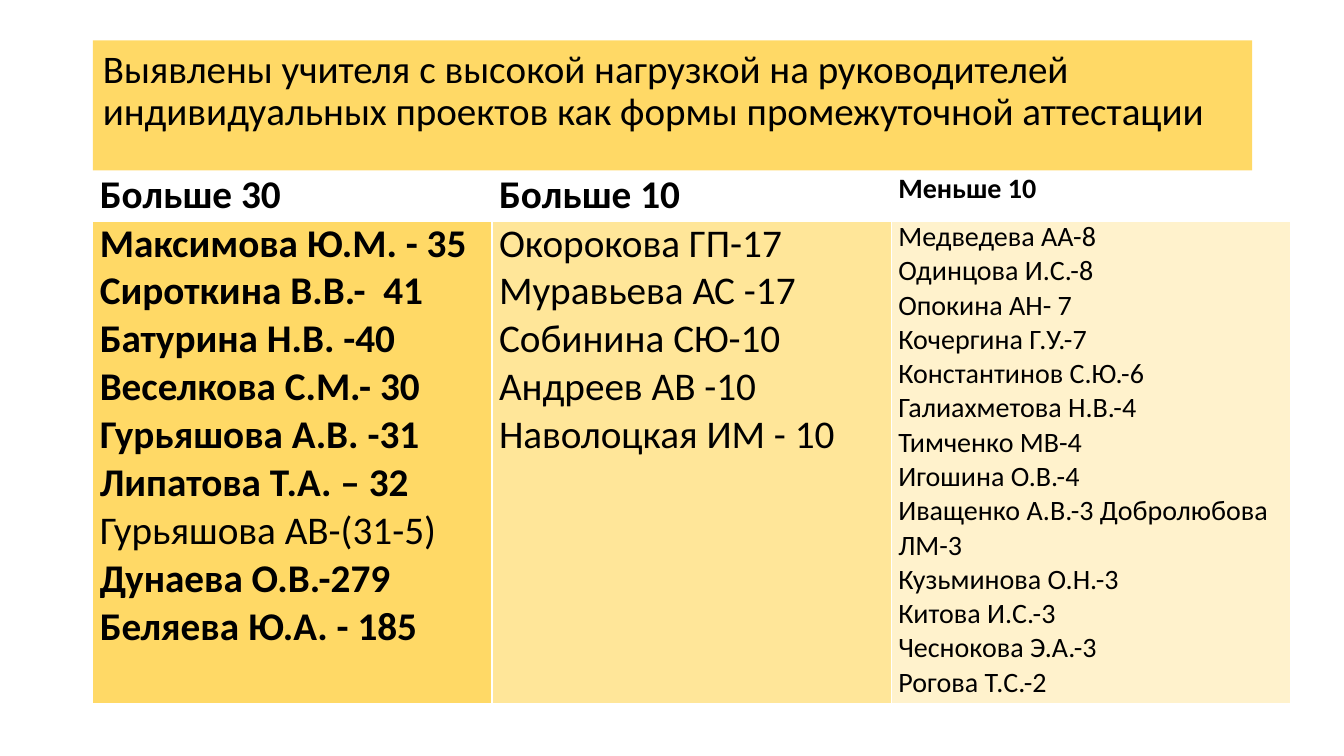
"""Build a slide that groups teachers by their individual project load."""
from dataclasses import dataclass

from lxml import etree
from pptx import Presentation
from pptx.dml.color import RGBColor
from pptx.enum.text import MSO_ANCHOR, MSO_AUTO_SIZE, PP_ALIGN
from pptx.oxml.ns import qn
from pptx.util import Inches, Pt

LEFT = PP_ALIGN.LEFT
TOP = MSO_ANCHOR.TOP
MIDDLE = MSO_ANCHOR.MIDDLE
NO_AUTOFIT = MSO_AUTO_SIZE.NONE

FONT = "Calibri"
BLACK = "000000"
WHITE = "FFFFFF"
GOLD = "FFD966"
TITLE_ONLY = 5
TABLE_LEFT, TABLE_TOP = 0.92, 1.7
COLUMN_WIDTH = 3.96
ROW_HEIGHTS = (0.48, 4.8)
TITLE = ("Выявлены учителя с высокой нагрузкой на руководителей "
         "индивидуальных проектов как формы промежуточной аттестации")


@dataclass(frozen=True)
class LoadGroup:
    """One table column: a load level and its teachers."""

    heading: str
    teachers: tuple[str, ...]
    fill: str
    size: float
    bold: bool = False
    regular: tuple[str, ...] = ()


GROUPS = (
    LoadGroup(
        "Больше 30",
        ("Максимова Ю.М. - 35", "Сироткина В.В.-  41", "Батурина Н.В. -40",
         "Веселкова С.М.- 30", "Гурьяшова А.В. -31", "Липатова Т.А. – 32",
         "Гурьяшова АВ-(31-5)", "Дунаева О.В.-279", "Беляева Ю.А. - 185"),
        GOLD, 28, bold=True, regular=("Гурьяшова АВ-(31-5)",)),
    LoadGroup(
        "Больше 10",
        ("Окорокова ГП-17", "Муравьева АС -17", "Собинина СЮ-10",
         "Андреев АВ -10", "Наволоцкая ИМ - 10"),
        "FFE699", 28),
    LoadGroup(
        "Меньше 10",
        ("Медведева АА-8", "Одинцова И.С.-8", "Опокина АН- 7",
         "Кочергина Г.У.-7", "Константинов С.Ю.-6 Галиахметова Н.В.-4",
         "Тимченко МВ-4", "Игошина О.В.-4",
         "Иващенко А.В.-3 Добролюбова ЛМ-3", "Кузьминова О.Н.-3",
         "Китова И.С.-3", "Чеснокова Э.А.-3", "Рогова Т.С.-2"),
        "FFF2CC", 20),
)


def color(value: str) -> RGBColor:
    """Turn a hex string into a colour."""
    return RGBColor.from_string(value)


def paint(target, value: str) -> None:
    """Fill a shape or a cell with a solid colour."""
    target.fill.solid()
    target.fill.fore_color.rgb = color(value)


def write(para, text: str, *, size: float, bold: bool = False,
          line_spacing: float = 1.0) -> None:
    """Write one formatted paragraph."""
    para.alignment = LEFT
    para.line_spacing = line_spacing
    span = para.add_run()
    span.text = text
    span.font.name = FONT
    span.font.size = Pt(size)
    span.font.bold = bold
    span.font.color.rgb = color(BLACK)


def add_borders(cell, bottom: float = 1) -> None:
    """Give a cell white borders with the bottom width in points."""
    properties = cell._tc.get_or_add_tcPr()
    for side, width in (("L", 1), ("R", 1), ("T", 1), ("B", bottom)):
        line = etree.SubElement(properties, qn(f"a:ln{side}"), w=str(Pt(width)))
        solid = etree.SubElement(line, qn("a:solidFill"))
        etree.SubElement(solid, qn("a:srgbClr"), val=WHITE)


def format_cell(cell, fill: str, bottom: float = 1) -> None:
    """Set the margins, borders and fill of a cell."""
    cell.margin_left = cell.margin_right = Inches(0.07)
    cell.margin_top = cell.margin_bottom = Inches(0)
    cell.vertical_anchor = TOP
    add_borders(cell, bottom)
    paint(cell, fill)


def add_title(page) -> None:
    """Place and fill the title placeholder."""
    title = page.shapes.title
    title.left, title.top = Inches(TABLE_LEFT), Inches(0.4)
    title.width, title.height = Inches(11.5), Inches(1.29)
    paint(title, GOLD)
    frame = title.text_frame
    frame.word_wrap = True
    frame.auto_size = NO_AUTOFIT
    frame.vertical_anchor = MIDDLE
    frame.margin_left = frame.margin_right = Inches(0.1)
    frame.margin_top, frame.margin_bottom = Inches(0.05), Inches(0.31)
    write(frame.paragraphs[0], TITLE, size=27.9, line_spacing=0.9)


def add_load_table(page) -> None:
    """Add the table with one column for each load group."""
    table = page.shapes.add_table(
        len(ROW_HEIGHTS), len(GROUPS), Inches(TABLE_LEFT), Inches(TABLE_TOP),
        Inches(COLUMN_WIDTH * len(GROUPS)), Inches(sum(ROW_HEIGHTS))).table
    table.horz_banding = False
    for row, height in zip(table.rows, ROW_HEIGHTS):
        row.height = Inches(height)
    for index, group in enumerate(GROUPS):
        table.columns[index].width = Inches(COLUMN_WIDTH)
        header, body = table.cell(0, index), table.cell(1, index)
        format_cell(header, WHITE, bottom=3)
        write(header.text_frame.paragraphs[0], group.heading,
              size=group.size, bold=True)
        format_cell(body, group.fill)
        frame = body.text_frame
        for number, teacher in enumerate(group.teachers):
            para = frame.add_paragraph() if number else frame.paragraphs[0]
            write(para, teacher, size=group.size,
                  bold=group.bold and teacher not in group.regular)


def main() -> None:
    """Create and save the deck."""
    deck = Presentation()
    deck.slide_width, deck.slide_height = Inches(13.33), Inches(7.5)
    page = deck.slides.add_slide(deck.slide_layouts[TITLE_ONLY])
    add_title(page)
    add_load_table(page)
    deck.save("out.pptx")


if __name__ == "__main__":
    main()
